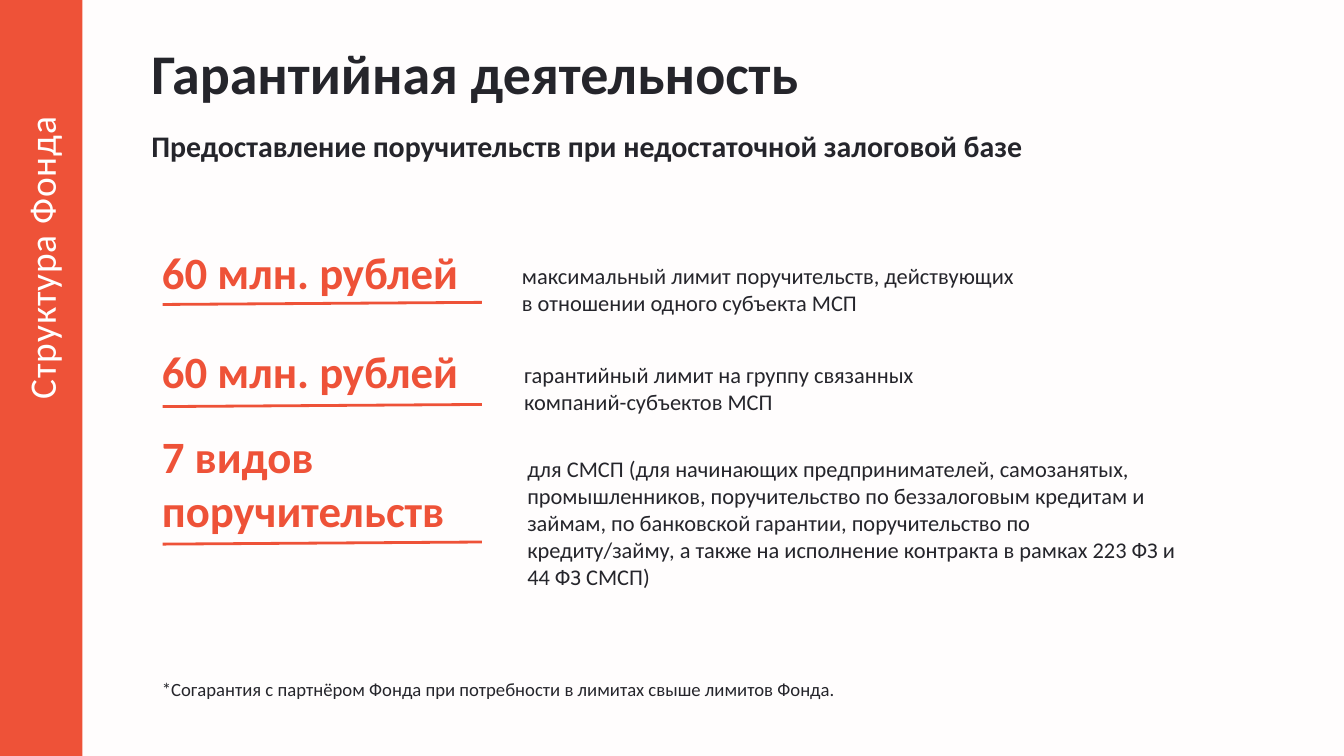
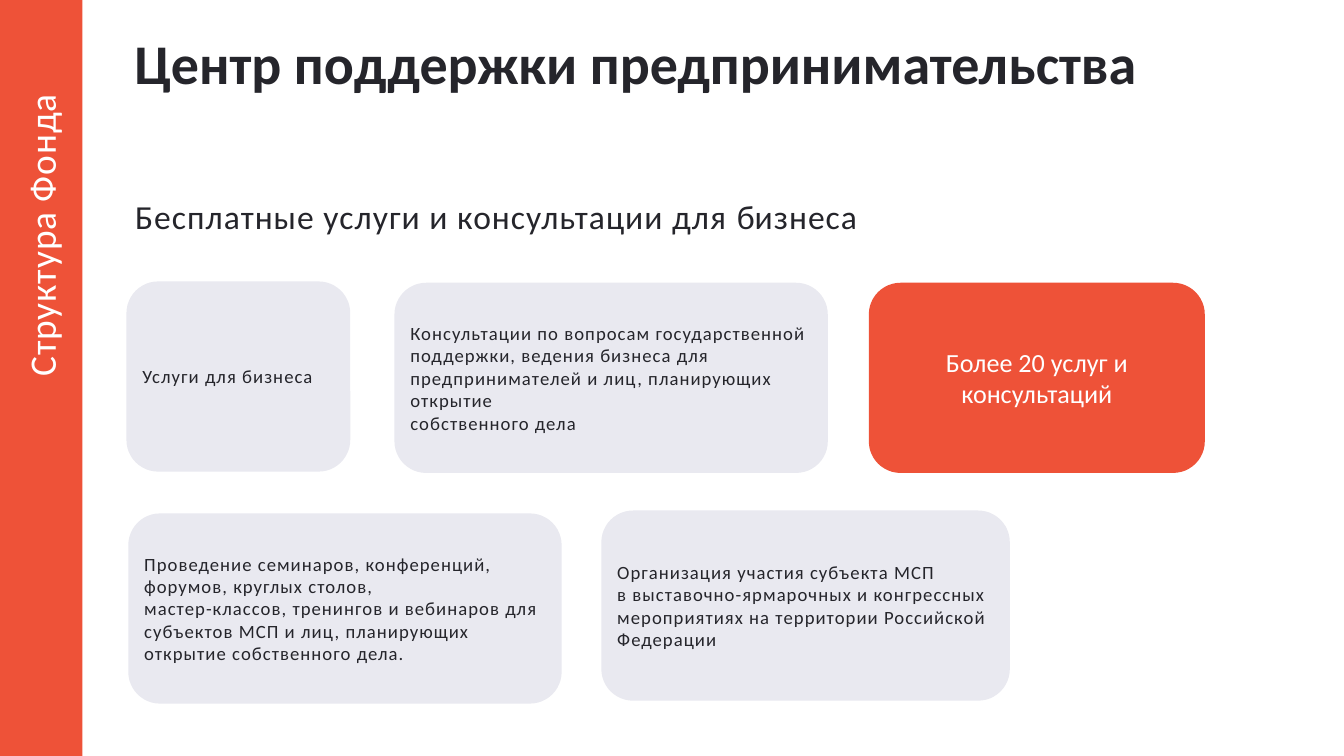
"""Builds two slides on the fund's guarantees and its business support centre."""
from lxml import etree
from pptx import Presentation
from pptx.dml.color import RGBColor
from pptx.enum.shapes import MSO_CONNECTOR, MSO_SHAPE
from pptx.enum.text import MSO_ANCHOR, PP_ALIGN
from pptx.oxml.ns import qn
from pptx.util import Cm, Pt

RECTANGLE = MSO_SHAPE.RECTANGLE
ROUNDED = MSO_SHAPE.ROUNDED_RECTANGLE
STRAIGHT = MSO_CONNECTOR.STRAIGHT
MIDDLE = MSO_ANCHOR.MIDDLE
LEFT, CENTER = PP_ALIGN.LEFT, PP_ALIGN.CENTER

COLORS = {
    "accent": "EE5238",
    "dark": "25252B",
    "card": "E9E9F0",
    "white": "FFFFFF",
    "warm": "FFFDFD",
}
FONT = "Calibri"
SLIDE_WIDTH, SLIDE_HEIGHT = 50.8, 28.58
BAND_WIDTH = 3.12
INDENT = 0.99
SECTION = "Структура Фонда"

GUARANTEE_TITLE = "Гарантийная деятельность"
GUARANTEE_SUBTITLE = "Предоставление поручительств при недостаточной залоговой базе"
FOOTNOTE = "*Согарантия с партнёром Фонда при потребности в лимитах свыше лимитов Фонда."
LABEL_LEFT, LABEL_WIDTH = 4.88, 15.62
RULE_LEFT, RULE_RIGHT, RULE_RISE = 6.15, 18.21, 0.08
GUARANTEES = [
    {
        "label": "60 млн. рублей",
        "label_top": 9.14,
        "label_height": 2.31,
        "rule_top": 11.51,
        "text": "максимальный лимит поручительств, действующих\n"
                "в отношении одного субъекта МСП",
        "text_box": (18.49, 9.8, 26.39, 2.31),
    },
    {
        "label": "60 млн. рублей",
        "label_top": 12.88,
        "label_height": 2.31,
        "rule_top": 15.37,
        "text": "гарантийный лимит на группу связанных\nкомпаний-субъектов МСП",
        "text_box": (18.57, 13.54, 25.4, 3.33),
    },
    {
        "label": "7 видов поручительств",
        "label_top": 16.1,
        "label_height": 4.37,
        "rule_top": 20.57,
        "text": "для СМСП (для начинающих предпринимателей, самозанятых, промышленников, "
                "поручительство по беззалоговым кредитам и займам, по банковской гарантии, "
                "поручительство по кредиту/займу, а также на исполнение контракта "
                "в рамках 223 ФЗ и 44 ФЗ СМСП)",
        "text_box": (18.69, 17.09, 26.09, 5.38),
    },
]

CENTRE_TITLE = "Центр поддержки предпринимательства"
CENTRE_SUBTITLE = [
    ("Бесплатные услуги и консультации для ", 1.1),
    ("б", 0),
    ("изнеса", 1.1),
]
CARD_HEIGHT = 7.19
CARDS = [
    ("Услуги для бизнеса", 4.78, 10.64, 8.46),
    ("Консультации по вопросам государственной поддержки, ведения бизнеса для "
     "предпринимателей и лиц, планирующих открытие\nсобственного дела",
     14.91, 10.69, 16.38),
    ("Проведение семинаров, конференций, форумов, круглых столов,\n"
     "мастер-классов, тренингов и вебинаров для субъектов МСП и лиц, "
     "планирующих открытие собственного дела.", 4.85, 19.41, 16.38),
    ("Организация участия субъекта МСП\nв выставочно-ярмарочных и конгрессных "
     "мероприятиях на территории Российской Федерации", 22.73, 19.3, 15.44),
]
HIGHLIGHT = ("Более 20 услуг и консультаций", 32.84, 10.69, 12.7)


def color(name):
    return RGBColor.from_string(COLORS[name])


def write(shape, runs, size, ink="dark", bold=False, indent=0, align=LEFT, leading=None):
    frame = shape.text_frame
    frame.word_wrap = True
    paragraph = frame.paragraphs[0]
    paragraph.alignment = align
    if indent:
        paragraph._p.get_or_add_pPr().set("marL", str(Cm(indent)))
    if leading:
        paragraph.line_spacing = leading
    for text, spacing in runs:
        for number, line in enumerate(text.split("\n")):
            if number:
                paragraph.add_line_break()
            run = paragraph.add_run()
            run.text = line
            run.font.name = FONT
            run.font.size = Pt(size)
            run.font.bold = bold
            run.font.color.rgb = color(ink)
            if spacing:
                run._r.get_or_add_rPr().set("spc", str(round(spacing * 100)))


def add_text(slide, box, runs, size, inset=True, **style):
    shape = slide.shapes.add_textbox(*map(Cm, box))
    if not inset:
        frame = shape.text_frame
        frame.margin_left = frame.margin_right = frame.margin_top = frame.margin_bottom = 0
    write(shape, runs, size, **style)
    return shape


def add_block(slide, kind, box, fill):
    shape = slide.shapes.add_shape(kind, *map(Cm, box))
    shape.shadow.inherit = False
    shape.fill.solid()
    shape.fill.fore_color.rgb = color(fill)
    shape.line.fill.background()
    return shape


def add_card(slide, card, fill, size, spacing=0, **style):
    text, left, top, width = card
    shape = add_block(slide, ROUNDED, (left, top, width, CARD_HEIGHT), fill)
    shape.text_frame.vertical_anchor = MIDDLE
    write(shape, [(text, spacing)], size, **style)


def add_rule(slide, top):
    ends = (RULE_LEFT, top, RULE_RIGHT, top - RULE_RISE)
    rule = slide.shapes.add_connector(STRAIGHT, *map(Cm, ends))
    rule.line.color.rgb = color("accent")
    rule.line.width = Pt(3)
    etree.SubElement(rule._element.spPr, qn("a:effectLst"))


def add_slide(presentation, background, title, title_box, section_top):
    slide = presentation.slides.add_slide(presentation.slide_layouts[6])
    slide.background.fill.solid()
    slide.background.fill.fore_color.rgb = color(background)
    add_text(slide, title_box, [(title, 0)], 60, inset=False, bold=True)
    add_block(slide, RECTANGLE, (0, 0, BAND_WIDTH, SLIDE_HEIGHT), "accent")
    section = add_text(slide, (-5.64, section_top, 14.4, 1.96), [(SECTION, 1)], 40,
                       ink="white", indent=INDENT)
    section.rotation = 270
    return slide


def build_guarantees(presentation):
    slide = add_slide(presentation, "warm", GUARANTEE_TITLE, (5.72, 1.45, 34.09, 4.93), 8.15)
    add_text(slide, (5.72, 4.55, 41.15, 2.9), [(GUARANTEE_SUBTITLE, 0)], 32,
             inset=False, bold=True, leading=1.2)
    for row in GUARANTEES:
        label_box = (LABEL_LEFT, row["label_top"], LABEL_WIDTH, row["label_height"])
        add_text(slide, label_box, [(row["label"], 0)], 48,
                 ink="accent", bold=True, indent=INDENT)
        add_text(slide, row["text_box"], [(row["text"], 0)], 24, indent=INDENT)
        add_rule(slide, row["rule_top"])
    add_text(slide, (5.13, 25.63, 42.29, 2.95), [(FOOTNOTE, 0)], 20,
             inset=False, indent=INDENT)


def build_centre(presentation):
    slide = add_slide(presentation, "white", CENTRE_TITLE, (5.08, 1.09, 39.8, 5.13), 7.29)
    add_text(slide, (5.11, 7.72, 33.91, 1.22), CENTRE_SUBTITLE, 36,
             inset=False, leading=Pt(34.3))
    for card in CARDS:
        add_card(slide, card, "card", 20, spacing=1.1)
    add_card(slide, HIGHLIGHT, "accent", 28, ink="white", align=CENTER)


def main():
    presentation = Presentation()
    presentation.slide_width = Cm(SLIDE_WIDTH)
    presentation.slide_height = Cm(SLIDE_HEIGHT)
    build_guarantees(presentation)
    build_centre(presentation)
    presentation.save("out.pptx")


if __name__ == "__main__":
    main()
